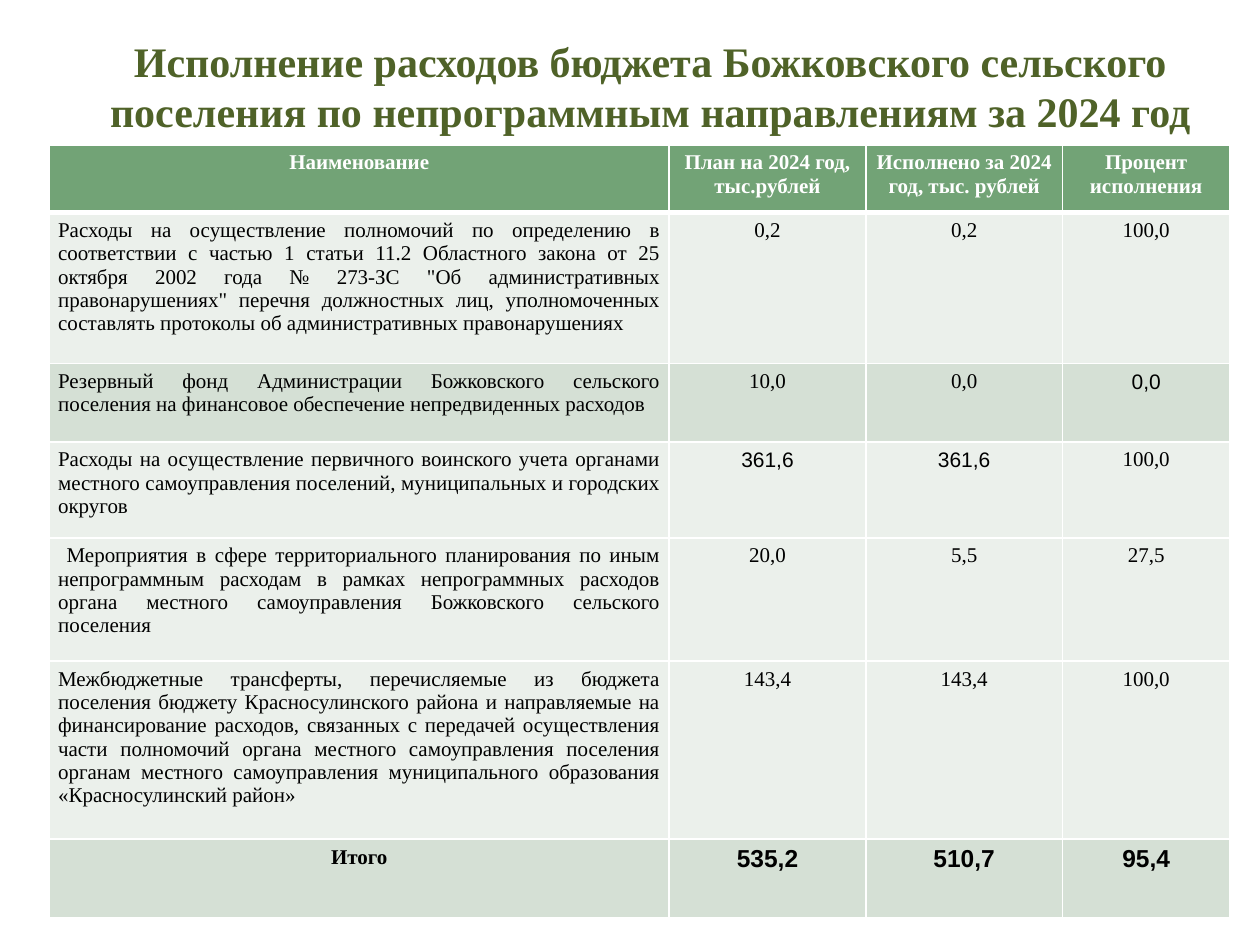
from lxml import etree
from pptx import Presentation
from pptx.dml.color import RGBColor
from pptx.enum.text import MSO_ANCHOR, PP_ALIGN
from pptx.oxml.ns import qn
from pptx.util import Pt

CENTER, JUSTIFY = PP_ALIGN.CENTER, PP_ALIGN.JUSTIFY
MIDDLE = MSO_ANCHOR.MIDDLE
OLIVE = RGBColor(0x4F, 0x62, 0x28)
GREEN = RGBColor(0x72, 0xA3, 0x76)
PALE = RGBColor(0xEB, 0xF0, 0xEB)
SAGE = RGBColor(0xD5, 0xE0, 0xD5)
WHITE = RGBColor(0xFF, 0xFF, 0xFF)
BLACK = RGBColor(0, 0, 0)
SERIF, SANS = "Times New Roman", "Arial"

TITLE = ("Исполнение расходов бюджета Божковского сельского поселения "
         "по непрограммным направлениям за 2024 год")
EXPENSES = [
    ("Наименование", "План на 2024 год,\nтыс.рублей",
     "Исполнено за 2024 год, тыс. рублей", "Процент исполнения"),
    ("Расходы на осуществление полномочий по определению в соответствии с частью 1 "
     "статьи 11.2 Областного закона от 25 октября 2002 года № 273-ЗС \"Об "
     "административных правонарушениях\" перечня должностных лиц, уполномоченных "
     "составлять протоколы об административных правонарушениях",
     "0,2", "0,2", "100,0"),
    ("Резервный фонд Администрации Божковского сельского поселения на финансовое "
     "обеспечение непредвиденных расходов", "10,0", "0,0", "0,0"),
    ("Расходы на осуществление первичного воинского учета органами местного "
     "самоуправления поселений, муниципальных и городских округов",
     "361,6", "361,6", "100,0"),
    (" Мероприятия в сфере территориального планирования по иным непрограммным "
     "расходам в рамках непрограммных расходов органа местного самоуправления "
     "Божковского сельского поселения", "20,0", "5,5", "27,5"),
    ("Межбюджетные трансферты, перечисляемые из бюджета поселения бюджету "
     "Красносулинского района и направляемые на финансирование расходов, связанных с "
     "передачей осуществления части полномочий органа местного самоуправления "
     "поселения органам местного самоуправления муниципального образования "
     "«Красносулинский район»", "143,4", "143,4", "100,0"),
    ("Итого", "535,2", "510,7", "95,4"),
]
COLUMN_WIDTHS = [354.2, 112.4, 112.4, 95.6]
ROW_HEIGHTS = [38.6, 86.4, 44.8, 54.8, 70.4, 101.8, 44.8]
ROW_FILLS = [GREEN, PALE, SAGE, PALE, PALE, PALE, SAGE]
TOTAL_ROW = len(EXPENSES) - 1
SANS_CELLS = {(2, 3), (3, 1), (3, 2)} | {(TOTAL_ROW, column) for column in (1, 2, 3)}


def write_text(frame, text, alignment, color, font_format):
    """Fill a text frame with paragraphs of one format."""
    frame.word_wrap = True
    frame.text = text
    for paragraph in frame.paragraphs:
        paragraph.alignment = alignment
        for run in paragraph.runs:
            run.font.color.rgb = color
            for name, value in font_format.items():
                setattr(run.font, name, value)


def add_borders(cell, widths):
    """Draw white cell borders, placed before the cell fill."""
    properties = cell._tc.get_or_add_tcPr()
    for position, (side, width) in enumerate(widths.items()):
        line = etree.Element(qn(f"a:{side}"), w=str(Pt(width)))
        fill = etree.SubElement(line, qn("a:solidFill"))
        etree.SubElement(fill, qn("a:srgbClr"), val=str(WHITE))
        properties.insert(position, line)


def add_title(slide, left, top, width, height):
    """Place the slide heading in the given box."""
    title = slide.shapes.add_textbox(Pt(left), Pt(top), Pt(width), Pt(height))
    title.text_frame.vertical_anchor = MIDDLE
    write_text(title.text_frame, TITLE, CENTER, OLIVE,
               {"name": SERIF, "size": Pt(24), "bold": True})


def format_expense_cell(cell, row, column, text):
    """Write and style one cell of the expense table."""
    is_header, is_total = row == 0, row == TOTAL_ROW
    margins = {"margin_left": 5, "margin_right": 5, "margin_top": 3.6, "margin_bottom": 3.6}
    for name, value in margins.items():
        setattr(cell, name, Pt(value))
    cell.fill.solid()
    cell.fill.fore_color.rgb = ROW_FILLS[row]
    add_borders(cell, {"lnL": 0.96, "lnR": 0.96,
                       "lnT": 3 if row == 1 else 0.96,
                       "lnB": 3 if is_header else 0.96})
    is_description = column == 0 and not (is_header or is_total)
    write_text(cell.text_frame, text,
               JUSTIFY if is_description else CENTER,
               WHITE if is_header else BLACK,
               {"name": SANS if (row, column) in SANS_CELLS else SERIF,
                "size": Pt(14 if is_total and column else 12),
                "bold": is_header or is_total})


def add_expense_table(slide, left, top):
    """Place the expense table with its corner at the given point."""
    table = slide.shapes.add_table(
        len(EXPENSES), len(COLUMN_WIDTHS), Pt(left), Pt(top),
        Pt(sum(COLUMN_WIDTHS)), Pt(sum(ROW_HEIGHTS))).table
    for column, width in zip(table.columns, COLUMN_WIDTHS):
        column.width = Pt(width)
    for row, height in zip(table.rows, ROW_HEIGHTS):
        row.height = Pt(height)
    for row, expense in enumerate(EXPENSES):
        for column, text in enumerate(expense):
            format_expense_cell(table.cell(row, column), row, column, text)


def main():
    """Build and save the budget slide."""
    presentation = Presentation()
    presentation.slide_width, presentation.slide_height = Pt(720), Pt(540)
    slide = presentation.slides.add_slide(presentation.slide_layouts[6])
    add_title(slide, 39.6, 15, 664, 67.8)
    add_expense_table(slide, 28.2, 82.8)
    presentation.save("out.pptx")


if __name__ == "__main__":
    main()
